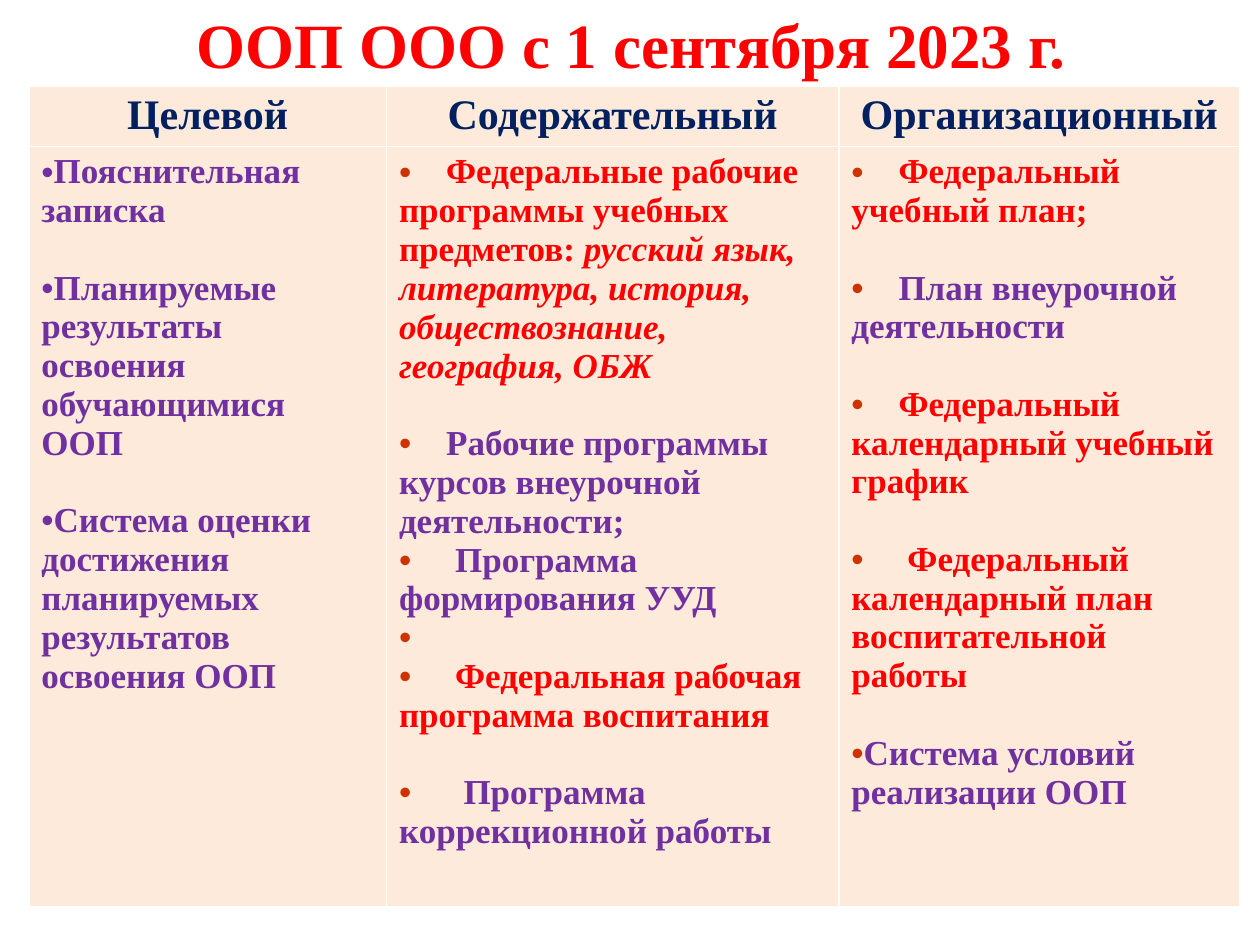
"""Build a slide with a three-column table of programme sections."""
from dataclasses import dataclass

from lxml import etree
from pptx import Presentation
from pptx.dml.color import RGBColor
from pptx.enum import text
from pptx.oxml import ns
from pptx.util import Cm, Pt

FONT = "Times New Roman"
RED, PURPLE, NAVY, PEACH, RUST = "FF0000", "7030A0", "002060", "FDEADA", "CC3300"


@dataclass
class Item:
    wording: str
    color: str = PURPLE
    tab: float = 0
    gap: bool = True
    italic: str = ""


@dataclass
class Column:
    heading: str
    width: float
    bullet: str
    items: list[Item]


COLUMNS = [
    Column("Целевой", 7.21, PURPLE, [
        Item("Пояснительная записка"),
        Item("Планируемые результаты освоения обучающимися ООП"),
        Item("Система оценки достижения планируемых результатов освоения ООП"),
    ]),
    Column("Содержательный", 9.12, RUST, [
        Item("Федеральные рабочие программы учебных предметов:", RED, 0.95,
             italic=" русский язык, литература, история, обществознание, география, ОБЖ"),
        Item("Рабочие программы курсов внеурочной деятельности;", tab=0.95, gap=False),
        Item("Программа формирования УУД", tab=1.13, gap=False),
        Item(" ", gap=False),
        Item("Федеральная рабочая программа воспитания", RED, 1.13),
        Item("Программа коррекционной работы", tab=1.3),
    ]),
    Column("Организационный", 8.08, RUST, [
        Item("Федеральный учебный план;", RED, 0.95),
        Item("План внеурочной деятельности", tab=0.95),
        Item("Федеральный календарный учебный график", RED, 0.95),
        Item("Федеральный календарный план воспитательной работы", RED, 1.13),
        Item("Система условий реализации ООП"),
    ]),
]


def rgb(color: str) -> RGBColor:
    return RGBColor.from_string(color)


def add_span(para, wording: str, size: float, color: str, italic: bool = False) -> None:
    span = para.add_run()
    span.text = wording
    formats = {"name": FONT, "size": Pt(size), "bold": True, "italic": italic}
    for name, value in formats.items():
        setattr(span.font, name, value)
    span.font.color.rgb = rgb(color)


def add_child(parent, tag: str, **attributes: str):
    return etree.SubElement(parent, ns.qn(tag), attributes)


def set_bullet(para, color: str, tab: float) -> None:
    props = para._p.get_or_add_pPr()
    props.set("marL", "0")
    props.set("indent", "0")
    add_child(add_child(props, "a:buClr"), "a:srgbClr", val=color)
    add_child(props, "a:buFont", typeface="Arial")
    add_child(props, "a:buChar", char="•")
    if tab:
        add_child(add_child(props, "a:tabLst"), "a:tab", pos=str(Cm(tab)), algn="l")


def fill_cell(cell) -> None:
    cell.fill.solid()
    cell.fill.fore_color.rgb = rgb(PEACH)


def add_heading(cell, heading: str) -> None:
    fill_cell(cell)
    para = cell.text_frame.paragraphs[0]
    para.alignment = text.PP_ALIGN.CENTER
    add_span(para, heading, 24, NAVY)


def add_items(cell, column: Column) -> None:
    fill_cell(cell)
    frame = cell.text_frame
    for index, item in enumerate(column.items):
        para = frame.add_paragraph() if index else frame.paragraphs[0]
        is_last = index == len(column.items) - 1
        para.space_after = Pt(22 if item.gap and not is_last else 0)
        set_bullet(para, column.bullet, item.tab)
        add_span(para, ("\t" if item.tab else "") + item.wording, 20, item.color)
        if item.italic:
            add_span(para, item.italic, 20, item.color, italic=True)


def add_title(page, wording: str) -> None:
    box = page.shapes.title
    position = {"left": 1.3, "top": 0, "width": 22.86, "height": 1.73}
    for name, value in position.items():
        setattr(box, name, Cm(value))
    frame = box.text_frame
    frame.vertical_anchor = text.MSO_ANCHOR.MIDDLE
    para = frame.paragraphs[0]
    para.alignment = text.PP_ALIGN.CENTER
    add_span(para, wording, 36, RED)


def add_sections(page, columns: list[Column]) -> None:
    width = sum(column.width for column in columns)
    table = page.shapes.add_table(
        2, len(columns), Cm(0.58), Cm(1.73), Cm(width), Cm(16.54)).table
    table.horz_banding = False
    for row, height in zip(table.rows, (1.22, 15.32)):
        row.height = Cm(height)
    for index, column in enumerate(columns):
        table.columns[index].width = Cm(column.width)
        add_heading(table.cell(0, index), column.heading)
        add_items(table.cell(1, index), column)


def main() -> None:
    deck = Presentation()
    deck.slide_width, deck.slide_height = Cm(25.4), Cm(19.05)
    page = deck.slides.add_slide(deck.slide_layouts[5])
    add_title(page, "ООП ООО с 1 сентября 2023 г.")
    add_sections(page, COLUMNS)
    deck.save("out.pptx")


if __name__ == "__main__":
    main()
